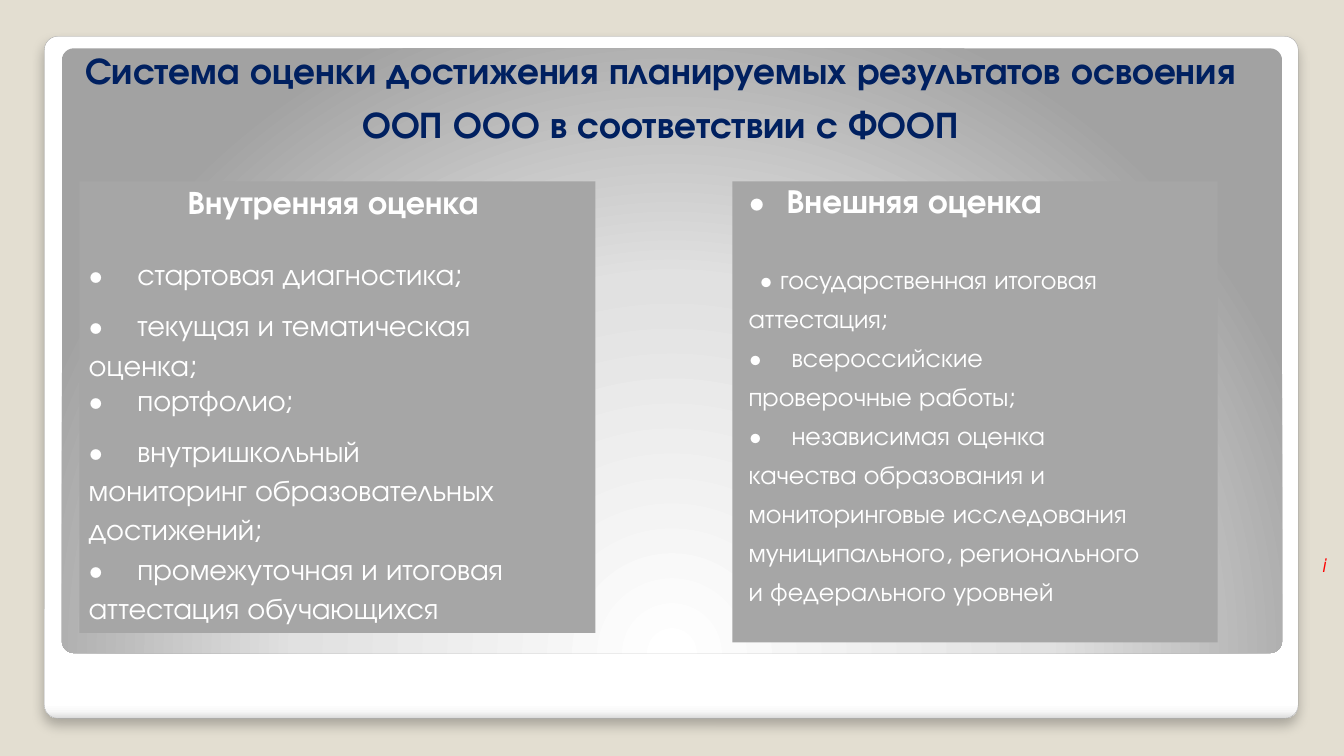
from pptx import Presentation
from pptx.dml.color import RGBColor
from pptx.enum.shapes import MSO_SHAPE as Shape
from pptx.enum.text import MSO_ANCHOR as Anchor, MSO_AUTO_SIZE as AutoSize, PP_ALIGN as Align
from pptx.oxml import parse_xml
from pptx.oxml.ns import nsdecls
from pptx.util import Inches, Pt

FONT = "TeX Gyre Adventor"
NAVY, WHITE, GREY, RED = "002060", "FFFFFF", "A6A6A6", "FD0000"
BULLET = "• "
TITLE = "Система оценки достижения планируемых результатов освоения ООП ООО в соответствии с ФООП"
INTERNAL = [
    ("Внутренняя оценка", dict(size=17.5, bold=True, align=Align.CENTER, after=18.9,
                               left=0, right=0.06, gap=None)),
    ("стартовая диагностика;", dict(after=6.3)),
    ("текущая и тематическая оценка;", dict(line=21.1)),
    ("портфолио;", dict(after=6.3)),
    ("внутришкольный мониторинг образовательных достижений;", dict(line=20.9)),
    ("промежуточная и итоговая аттестация обучающихся", dict(line=21.1)),
]
EXTERNAL = [
    ("Внешняя оценка", dict(size=18, bold=True, gap=3)),
    ("государственная итоговая аттестация;", dict(before=18.9, indent=0.08, gap=0)),
    ("всероссийские проверочные работы;", dict(right=1)),
    ("независимая оценка качества образования и мониторинговые исследования "
     "муниципального, регионального и федерального уровней", {}),
]


def color(value):
    """Turn a hex string into a colour."""
    return RGBColor.from_string(value)


def place(shape, box):
    """Move a shape to a box of left, top, width and height in inches."""
    shape.left, shape.top, shape.width, shape.height = map(Inches, box)


def prepare_frame(shape):
    """Give a text frame no margins, wrapping and a fixed size."""
    frame = shape.text_frame
    frame.margin_left = frame.margin_right = frame.margin_top = frame.margin_bottom = 0
    frame.word_wrap, frame.auto_size = True, AutoSize.NONE
    frame.vertical_anchor = Anchor.TOP
    return frame


def format_paragraph(paragraph, text, size, fill, bold=False, align=Align.LEFT, line=None,
                     before=0, after=0, left=0, right=0, indent=0, gap=None):
    """Write one paragraph, led by a bullet with widened spacing if a gap is given."""
    if gap is not None:
        bullet = paragraph.add_run()
        bullet.text, bullet.font.bold = BULLET, False
        bullet.font._element.set("spc", str(round(gap * 100)))
    paragraph.add_run().text = text
    paragraph.alignment = align
    paragraph.space_before, paragraph.space_after = Pt(before), Pt(after)
    paragraph.line_spacing = Pt(line) if line else 1.0
    font = paragraph.font
    font.name, font.size, font.bold, font.color.rgb = FONT, Pt(size), bold, color(fill)
    properties = paragraph._p.get_or_add_pPr()
    for name, value in (("marL", left), ("marR", right), ("indent", indent)):
        properties.set(name, str(Inches(value)))
    no_bullet = parse_xml(f"<a:buNone {nsdecls('a')}/>")
    properties.insert_element_before(no_bullet, "a:tabLst", "a:defRPr", "a:extLst")


def add_panel(slide, box, stops, direction):
    """Add a rounded panel with a gradient behind the text."""
    panel = slide.shapes.add_shape(Shape.ROUNDED_RECTANGLE, *map(Inches, box))
    panel.adjustments[0] = 0.02
    panel.shadow.inherit = False
    panel.line.fill.background()
    panel.fill.background()
    properties = panel._element.spPr
    marks = "".join(f'<a:gs pos="{position * 1000}"><a:srgbClr val="{value}"/></a:gs>'
                    for position, value in stops)
    gradient = parse_xml(f'<a:gradFill {nsdecls("a")} rotWithShape="1">'
                         f"<a:gsLst>{marks}</a:gsLst>{direction}</a:gradFill>")
    properties.replace(properties.find("{*}noFill"), gradient)
    return panel


def add_backdrop(slide, width, height):
    """Draw the page colour, the white card and the grey glow."""
    slide.background.fill.solid()
    slide.background.fill.fore_color.rgb = color("E3DED1")
    card = add_panel(slide, (0.33, 0.27, width - 0.67, height - 0.55),
                     [(0, WHITE), (98, WHITE), (99, "F7F7F7"), (100, "DADADA")],
                     '<a:lin ang="5400000" scaled="0"/>')
    card.line.color.rgb, card.line.width = color("A4A4A4"), Pt(0.16)
    card._element.spPr.find("{*}effectLst").append(parse_xml(
        f'<a:outerShdw {nsdecls("a")} blurRad="{Pt(6)}" dist="{Pt(4)}" dir="5400000" '
        'algn="t" rotWithShape="0"><a:srgbClr val="000000"><a:alpha val="25000"/>'
        "</a:srgbClr></a:outerShdw>"))
    glow = add_panel(slide, (0.46, 0.36, width - 0.92, 4.5),
                     [(0, WHITE), (55, "E1E1E1"), (100, "A2A2A2")],
                     '<a:path path="circle"><a:fillToRect l="50000" t="175000" '
                     'r="50000" b="-75000"/></a:path>')
    for position, panel in enumerate((card, glow), start=2):
        slide.shapes._spTree.insert(position, panel._element)


def fill_title(placeholder, box):
    """Place the heading of the slide."""
    place(placeholder, box)
    frame = prepare_frame(placeholder)
    format_paragraph(frame.paragraphs[0], TITLE, 20, NAVY, True, Align.CENTER, 28.6)


def fill_column(placeholder, box, items, defaults):
    """Turn a body placeholder into a grey card with a list."""
    place(placeholder, box)
    placeholder.fill.solid()
    placeholder.fill.fore_color.rgb = color(GREY)
    frame = prepare_frame(placeholder)
    for index, (text, options) in enumerate(items):
        paragraph = frame.add_paragraph() if index else frame.paragraphs[0]
        format_paragraph(paragraph, text, fill=WHITE, **{**defaults, **options})


def add_side_mark(slide, box):
    """Add the small red letter at the right edge."""
    mark = slide.shapes.add_textbox(*map(Inches, box))
    frame = prepare_frame(mark)
    frame.word_wrap = False
    format_paragraph(frame.paragraphs[0], "i", 10, RED, left=0.07)
    frame.paragraphs[0].font.italic = True


def main():
    """Build the slide and save it."""
    width = 10
    height = width * 9 / 16
    presentation = Presentation()
    presentation.slide_width, presentation.slide_height = Inches(width), Inches(height)
    slide = presentation.slides.add_slide(presentation.slide_layouts[3])
    title, internal, external = list(slide.placeholders)[:3]
    add_backdrop(slide, width, height)
    fill_title(title, (0.42, 0.29, 8.99, 0.79))
    fill_column(internal, (0.59, 1.35, 3.84, 3.36), INTERNAL,
                dict(size=16, left=0.07, right=0.65, gap=6.7))
    fill_column(external, (5.45, 1.35, 3.61, 3.43), EXTERNAL,
                dict(size=14, left=0.12, right=0.55, gap=5.9, line=20.9))
    add_side_mark(slide, (9.77, 4.12, 0.07, 0.17))
    presentation.save("out.pptx")


if __name__ == "__main__":
    main()
